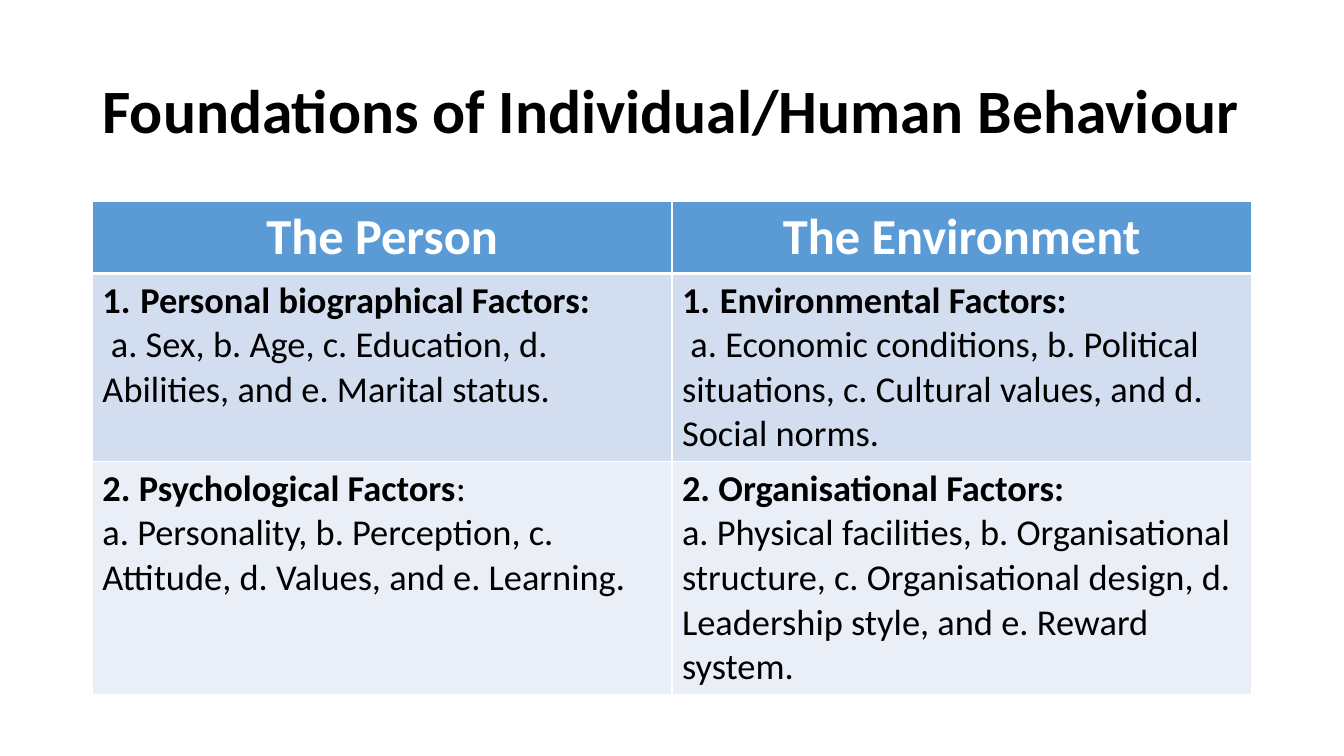
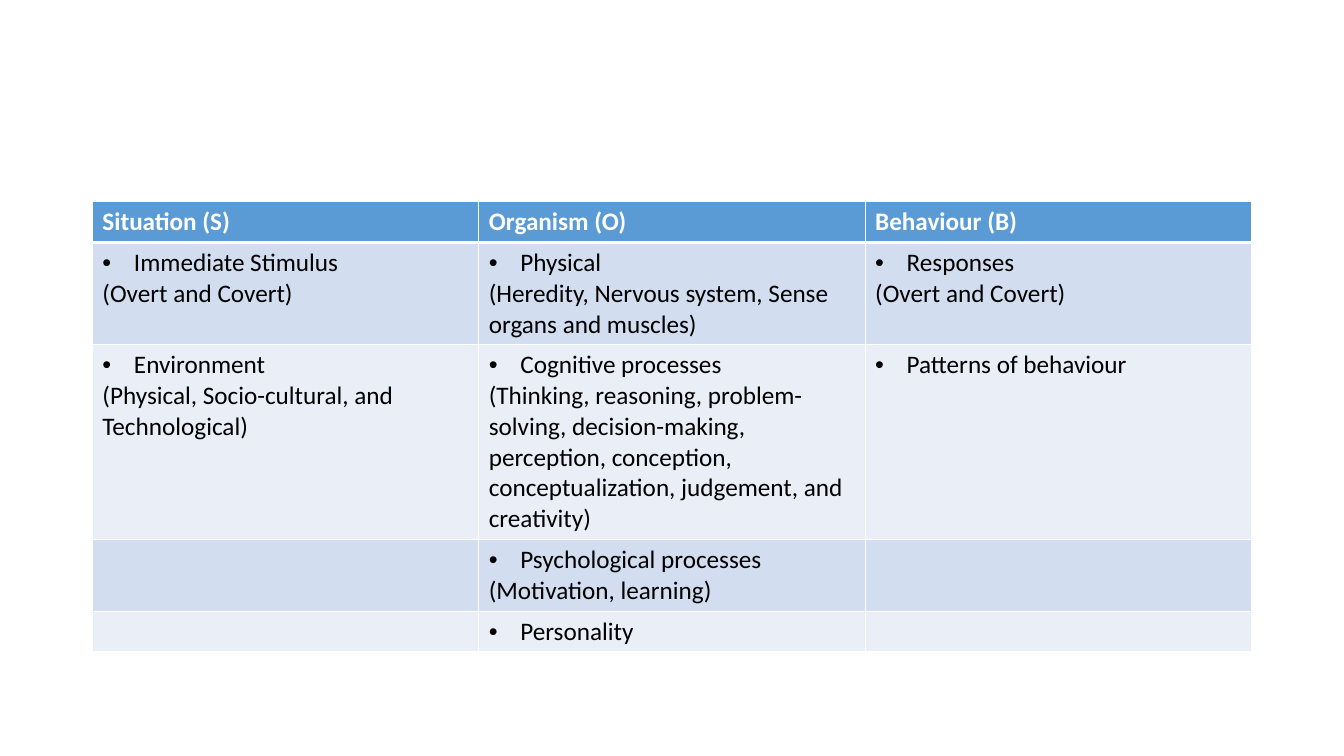
from lxml import etree
from pptx import Presentation
from pptx.dml.color import RGBColor
from pptx.enum.text import MSO_ANCHOR, MSO_AUTO_SIZE, PP_ALIGN
from pptx.oxml.ns import qn
from pptx.util import Pt

LEFT, CENTER = PP_ALIGN.LEFT, PP_ALIGN.CENTER
MIDDLE, NO_FIT = MSO_ANCHOR.MIDDLE, MSO_AUTO_SIZE.NONE
TITLE_ONLY, BLANK = 5, 6

FONT = "Calibri"
BLACK, WHITE = "000000", "FFFFFF"
HEADER_FILL, BANDS = "5B9BD5", ("D2DEEF", "EAEFF7")
MARGIN, TABLE_TOP, CONTENT_WIDTH = 66, 144, 828

PLAIN, HEADING, NUMBERED, BULLET, OFFSET = "plain", "heading", "numbered", "bullet", "offset"
INDENTS = {NUMBERED: (27, -27), BULLET: (22.5, -22.5), OFFSET: (0, 6)}

FOUNDATIONS = {
    "title": "Foundations of Individual/Human Behaviour",
    "header": ["The Person", "The Environment"],
    "header_size": 36, "header_align": CENTER, "body_size": 26,
    "heights": [50, 134.5, 165.5],
    "rows": [
        [
            [(NUMBERED, "Personal biographical Factors:"),
             (OFFSET, "a. Sex, b. Age, c. Education, d. Abilities, and e. Marital status.")],
            [(NUMBERED, "Environmental Factors:"),
             (OFFSET, "a. Economic conditions, b. Political situations, c. Cultural values, "
                      "and d. Social norms.")],
        ],
        [
            [(HEADING, "2. Psychological Factors", ":"),
             (PLAIN, "a. Personality, b. Perception, c. Attitude, d. Values, and e. Learning.")],
            [(HEADING, "2. Organisational Factors:"),
             (PLAIN, "a. Physical facilities, b. Organisational structure, c. Organisational "
                     "design, d. Leadership style, and e. Reward system.")],
        ],
    ],
}

SOB_MODEL = {
    "title": None,
    "header": ["Situation (S)", "Organism (O)", "Behaviour (B)"],
    "header_size": 18, "header_align": LEFT, "body_size": 18,
    "heights": [29, 73, 139, 51, 29],
    "rows": [
        [
            [(BULLET, "Immediate Stimulus"), (PLAIN, "(Overt and Covert)")],
            [(BULLET, "Physical"),
             (PLAIN, "(Heredity, Nervous system, Sense organs and muscles)")],
            [(BULLET, "Responses"), (PLAIN, "(Overt and Covert)")],
        ],
        [
            [(BULLET, "Environment"),
             (PLAIN, "(Physical, Socio-cultural, and Technological)")],
            [(BULLET, "Cognitive processes"),
             (PLAIN, "(Thinking, reasoning, problem-solving, decision-making, perception, "
                     "conception, conceptualization, judgement, and creativity)")],
            [(BULLET, "Patterns of behaviour")],
        ],
        [[], [(BULLET, "Psychological processes"), (PLAIN, "(Motivation, learning)")], []],
        [[], [(BULLET, "Personality")], []],
    ],
}


def color(value):
    return RGBColor.from_string(value)


def set_font(font, size, hex_color, bold):
    font.name, font.size, font.bold = FONT, Pt(size), bold
    font.color.rgb = color(hex_color)


def add_marker(paragraph, kind):
    properties = paragraph._p.get_or_add_pPr()
    margin, indent = INDENTS[kind]
    properties.set("marL", str(Pt(margin)))
    properties.set("indent", str(Pt(indent)))
    if kind == NUMBERED:
        marker = etree.Element(qn("a:buAutoNum"), type="arabicPeriod")
    elif kind == BULLET:
        properties.insert(0, etree.Element(qn("a:buFont"), typeface="Arial"))
        marker = etree.Element(qn("a:buChar"), char="•")
    else:
        marker = etree.Element(qn("a:buNone"))
    properties.insert(len(properties.findall(qn("a:buFont"))), marker)


def style_cell(cell, fill, bottom_width):
    properties = cell._tc.get_or_add_tcPr()
    for side, width in (("L", 1), ("R", 1), ("T", 1), ("B", bottom_width)):
        line = etree.SubElement(properties, qn(f"a:ln{side}"), w=str(Pt(width)))
        line_fill = etree.SubElement(line, qn("a:solidFill"))
        etree.SubElement(line_fill, qn("a:srgbClr"), val=WHITE)
    cell.fill.solid()
    cell.fill.fore_color.rgb = color(fill)


def write_cell(cell, entries, size):
    frame = cell.text_frame
    if not entries:
        set_font(frame.paragraphs[0].font, size, BLACK, False)
    for index, (kind, text, *tail) in enumerate(entries):
        paragraph = frame.add_paragraph() if index else frame.paragraphs[0]
        set_font(paragraph.font, size, BLACK, kind in (HEADING, NUMBERED))
        if kind in INDENTS:
            add_marker(paragraph, kind)
        paragraph.add_run().text = text
        for plain_text in tail:
            run = paragraph.add_run()
            run.text = plain_text
            run.font.bold = False


def add_title(slide, text):
    title = slide.shapes.title
    title.left, title.top, title.width, title.height = map(Pt, (MARGIN, 29, CONTENT_WIDTH, 104))
    frame = title.text_frame
    frame.text = text
    frame.auto_size, frame.vertical_anchor = NO_FIT, MIDDLE
    paragraph = frame.paragraphs[0]
    paragraph.alignment, paragraph.line_spacing = LEFT, 0.9
    set_font(paragraph.font, 44, BLACK, True)


def add_factor_table(slide, content):
    header, heights = content["header"], content["heights"]
    table = slide.shapes.add_table(
        len(heights), len(header), Pt(MARGIN), Pt(TABLE_TOP),
        Pt(CONTENT_WIDTH), Pt(sum(heights))).table
    for row, height in zip(table.rows, heights):
        row.height = Pt(height)
    for column, heading in enumerate(header):
        cell = table.cell(0, column)
        style_cell(cell, HEADER_FILL, 3)
        cell.text = heading
        paragraph = cell.text_frame.paragraphs[0]
        paragraph.alignment = content["header_align"]
        set_font(paragraph.font, content["header_size"], WHITE, True)
    for row, factors in enumerate(content["rows"]):
        for column, entries in enumerate(factors):
            cell = table.cell(row + 1, column)
            style_cell(cell, BANDS[row % len(BANDS)], 1)
            write_cell(cell, entries, content["body_size"])


def main():
    deck = Presentation()
    deck.slide_width, deck.slide_height = Pt(960), Pt(540)
    for content in (FOUNDATIONS, SOB_MODEL):
        layout = TITLE_ONLY if content["title"] else BLANK
        slide = deck.slides.add_slide(deck.slide_layouts[layout])
        if content["title"]:
            add_title(slide, content["title"])
        add_factor_table(slide, content)
    deck.save("out.pptx")


if __name__ == "__main__":
    main()
